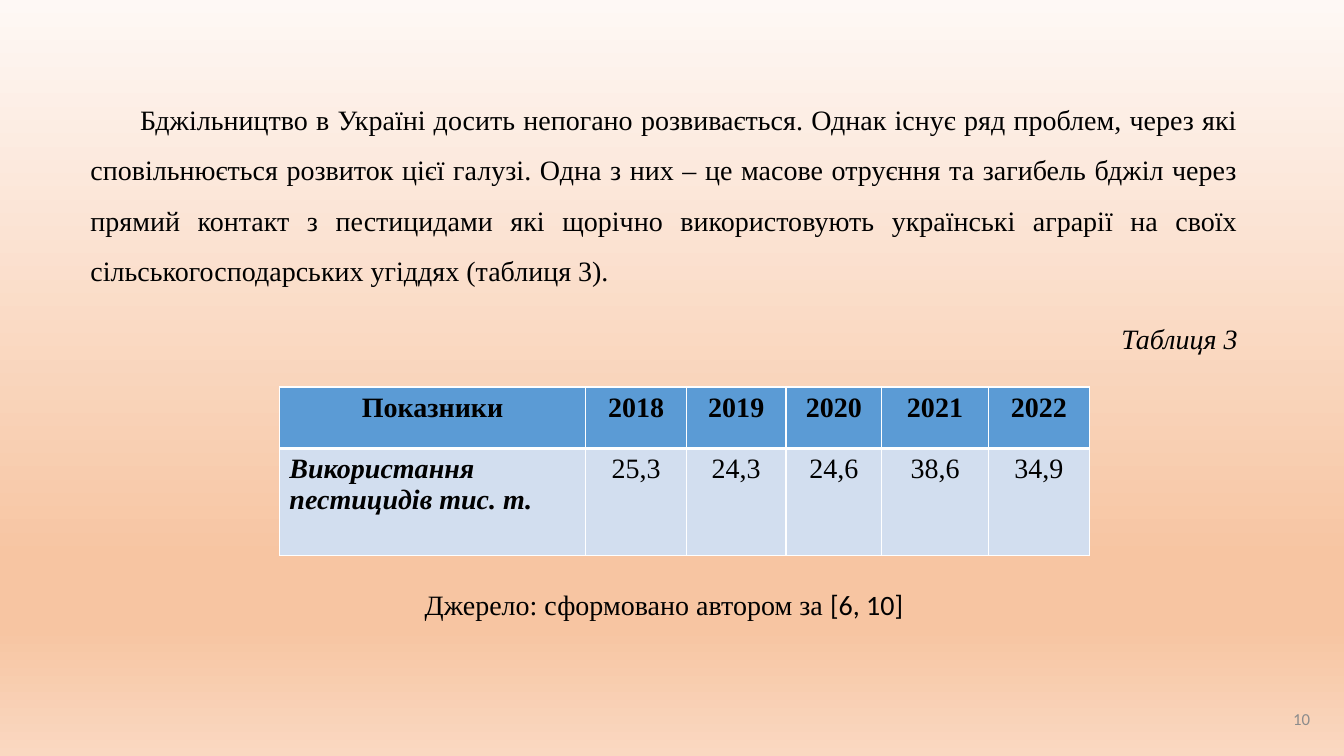
import lxml.etree
import pptx
import pptx.dml.color
import pptx.enum.text
import pptx.oxml
import pptx.oxml.ns
import pptx.util

Cm = pptx.util.Cm
Pt = pptx.util.Pt
RGBColor = pptx.dml.color.RGBColor
Align = pptx.enum.text.PP_ALIGN
Anchor = pptx.enum.text.MSO_ANCHOR
qn = pptx.oxml.ns.qn

BLACK = RGBColor(0x00, 0x00, 0x00)
WHITE = RGBColor(0xFF, 0xFF, 0xFF)
GREY = RGBColor(0x8C, 0x8C, 0x8C)
HEADER_BLUE = RGBColor(0x5B, 0x9B, 0xD5)
ROW_BLUE = RGBColor(0xD2, 0xDE, 0xEF)
CREAM = RGBColor(0xFE, 0xF8, 0xF5)
PEACH = RGBColor(0xF7, 0xC5, 0xA2)
LIGHT_PEACH = RGBColor(0xFA, 0xD8, 0xC1)
BACKGROUND_STOPS = [(0, CREAM), (74, PEACH), (83, PEACH), (100, LIGHT_PEACH)]

SERIF = "Times New Roman"
SANS = "Calibri"
MARGIN = Cm(2.03)
TEXT_WIDTH = Cm(29.41)

INTRO = (
    "Бджільництво в Україні досить непогано розвивається. Однак існує ряд "
    "проблем, через які сповільнюється розвиток цієї галузі. Одна з них – це "
    "масове отруєння та загибель бджіл через прямий контакт з пестицидами які "
    "щорічно використовують українські аграрії на своїх сільськогосподарських "
    "угіддях (таблиця 3)."
)
TABLE_ROWS = [
    ["Показники", "2018", "2019", "2020", "2021", "2022"],
    ["Використання пестицидів тис. т.", "25,3", "24,3", "24,6", "38,6", "34,9"],
]
COLUMN_WIDTHS = [7.72, 2.54, 2.51, 2.41, 2.69, 2.54]
ROW_HEIGHTS = [1.55, 2.69]


def paint_background(page):
    fill = page.background.fill
    fill.gradient()
    fill.gradient_angle = 270
    stop_list = page.element.find(".//" + qn("a:gsLst"))
    for stop in list(stop_list):
        stop_list.remove(stop)
    for position, color in BACKGROUND_STOPS:
        stop = lxml.etree.SubElement(stop_list, qn("a:gs"), pos=str(position * 1000))
        lxml.etree.SubElement(stop, qn("a:srgbClr"), val=str(color))


def add_span(para, text, font=SERIF, size=20, color=BLACK, bold=False, italic=False):
    span = para.add_run()
    span.text = text
    span.font.name = font
    span.font.size = Pt(size)
    span.font.color.rgb = color
    span.font.bold = bold
    span.font.italic = italic


def add_text(page, text, left=MARGIN, top=0, width=TEXT_WIDTH, height=Cm(1.2),
             align=Align.LEFT, anchor=Anchor.TOP, line_spacing=None,
             space_before=0, indent=0, **span_format):
    box = page.shapes.add_textbox(left, top, width, height)
    frame = box.text_frame
    frame.word_wrap = True
    frame.vertical_anchor = anchor
    para = frame.paragraphs[0]
    para.alignment = align
    para.line_spacing = line_spacing
    para.space_before = Pt(space_before)
    if indent:
        para._p.get_or_add_pPr().set("indent", str(indent))
    add_span(para, text, **span_format)
    return para


def set_borders(cell, top, bottom):
    properties = cell._tc.get_or_add_tcPr()
    widths = {"lnL": 1, "lnR": 1, "lnT": top, "lnB": bottom}
    for index, (side, width) in enumerate(widths.items()):
        line = pptx.oxml.parse_xml(
            f'<a:{side} {pptx.oxml.ns.nsdecls("a")} w="{Pt(width)}">'
            f'<a:solidFill><a:srgbClr val="{WHITE}"/></a:solidFill></a:{side}>'
        )
        properties.insert(index, line)


def add_pesticide_table(page):
    frame = page.shapes.add_table(
        len(TABLE_ROWS), len(COLUMN_WIDTHS), Cm(7.04), Cm(9.75),
        Cm(sum(COLUMN_WIDTHS)), Cm(sum(ROW_HEIGHTS)),
    )
    table = frame.table
    for column, width in zip(table.columns, COLUMN_WIDTHS):
        column.width = Cm(width)
    for row, height in zip(table.rows, ROW_HEIGHTS):
        row.height = Cm(height)
    for row_index, texts in enumerate(TABLE_ROWS):
        header = row_index == 0
        for column_index, text in enumerate(texts):
            label = not header and column_index == 0
            cell = table.cell(row_index, column_index)
            cell.fill.solid()
            cell.fill.fore_color.rgb = HEADER_BLUE if header else ROW_BLUE
            set_borders(cell, top=1 if header else 3, bottom=3 if header else 1)
            para = cell.text_frame.paragraphs[0]
            para.alignment = Align.LEFT if label else Align.CENTER
            add_span(para, text, bold=header or label, italic=label)


def main():
    deck = pptx.Presentation()
    deck.slide_width = Cm(33.87)
    deck.slide_height = Cm(19.05)
    page = deck.slides.add_slide(deck.slide_layouts[6])
    paint_background(page)
    add_text(page, INTRO, top=Cm(1.7), height=Cm(5.66), align=Align.JUSTIFY,
             anchor=Anchor.BOTTOM, line_spacing=1.5, indent=Cm(1.25))
    add_text(page, "Таблиця 3", top=Cm(8.08), align=Align.RIGHT,
             line_spacing=0.9, space_before=10, italic=True)
    add_pesticide_table(page)
    source = add_text(page, "Джерело: сформовано автором за ", top=Cm(14.78),
                      align=Align.CENTER, line_spacing=0.9, space_before=10)
    add_span(source, "[6, 10]", font=SANS)
    add_text(page, "10", left=Cm(31.75), top=Cm(17.58), width=Cm(1.52),
             height=Cm(1.09), align=Align.RIGHT, anchor=Anchor.MIDDLE,
             font=SANS, size=12, color=GREY)
    deck.save("out.pptx")


if __name__ == "__main__":
    main()
